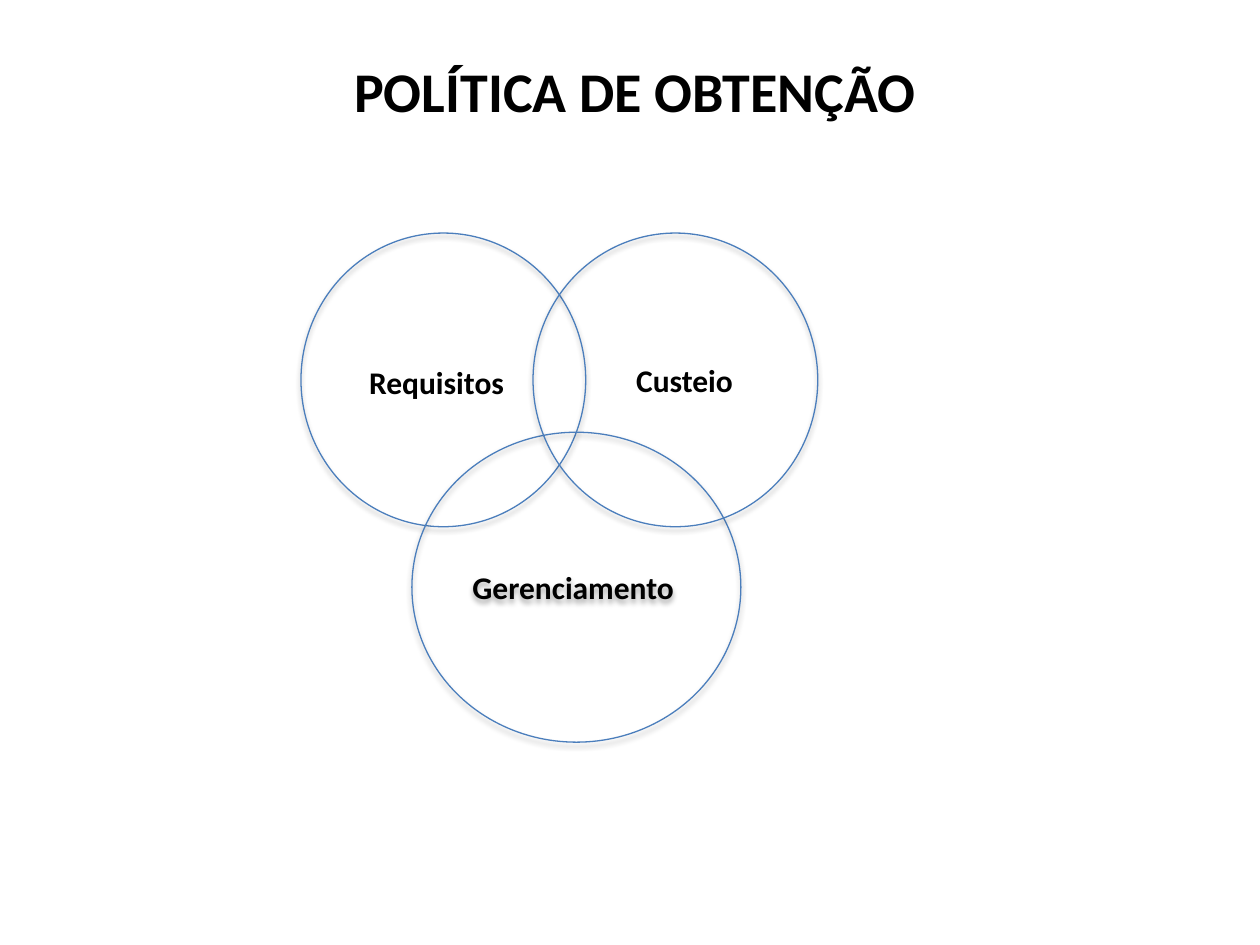
from lxml.etree import SubElement
from pptx import Presentation
from pptx.dml.color import RGBColor
from pptx.enum.shapes import MSO_SHAPE as Shape
from pptx.enum.text import MSO_ANCHOR as Anchor, MSO_AUTO_SIZE as AutoSize, PP_ALIGN as Align
from pptx.oxml.ns import qn
from pptx.util import Pt

BLACK = RGBColor(0x00, 0x00, 0x00)
BLUE = RGBColor(0x4B, 0x7E, 0xBC)


class VennSlide:
    font = "Calibri"
    label_size = 18
    title_size = 32

    def __init__(self, deck):
        self.page = deck.slides.add_slide(deck.slide_layouts[6])

    def set_text(self, frame, text, size, align=Align.LEFT):
        frame.word_wrap = True
        frame.text = text
        para = frame.paragraphs[0]
        para.alignment = align
        for span in para.runs:
            span.font.name = self.font
            span.font.size = Pt(size)
            span.font.bold = True
            span.font.color.rgb = BLACK

    def add_shadow(self, shape):
        shape.shadow.inherit = False
        effects = shape._element.spPr.find(qn("a:effectLst"))
        shadow = SubElement(effects, qn("a:outerShdw"), blurRad=str(Pt(3.1)),
                            dist=str(Pt(1.8)), dir="5400000", rotWithShape="0")
        color = SubElement(shadow, qn("a:srgbClr"), val=str(BLACK))
        SubElement(color, qn("a:alpha"), val="35000")

    def add_circle(self, left, top, width, height, text=None):
        circle = self.page.shapes.add_shape(
            Shape.OVAL, Pt(left), Pt(top), Pt(width), Pt(height))
        circle.fill.background()
        circle.line.color.rgb = BLUE
        circle.line.width = Pt(0.75)
        self.add_shadow(circle)
        if text:
            circle.text_frame.vertical_anchor = Anchor.MIDDLE
            self.set_text(circle.text_frame, text, self.label_size)

    def add_label(self, left, top, width, height, text, size=label_size, align=Align.LEFT):
        box = self.page.shapes.add_textbox(Pt(left), Pt(top), Pt(width), Pt(height))
        self.set_text(box.text_frame, text, size, align)
        box.text_frame.auto_size = AutoSize.SHAPE_TO_FIT_TEXT


def main():
    deck = Presentation()
    deck.slide_width, deck.slide_height = Pt(720), Pt(540)
    venn = VennSlide(deck)
    venn.add_circle(172, 133.2, 162.7, 167.8)
    venn.add_circle(235.4, 247, 188, 177.1, "Gerenciamento")
    venn.add_circle(304.6, 133.2, 162.7, 167.8)
    venn.add_label(203.8, 203.8, 142.6, 51.1, "Requisitos")
    venn.add_label(356.4, 202.5, 106.6, 28.8, "Custeio")
    venn.add_label(34.6, 28.8, 656.6, 46.1, "POLÍTICA DE OBTENÇÃO",
                   venn.title_size, Align.CENTER)
    deck.save("out.pptx")


if __name__ == "__main__":
    main()
